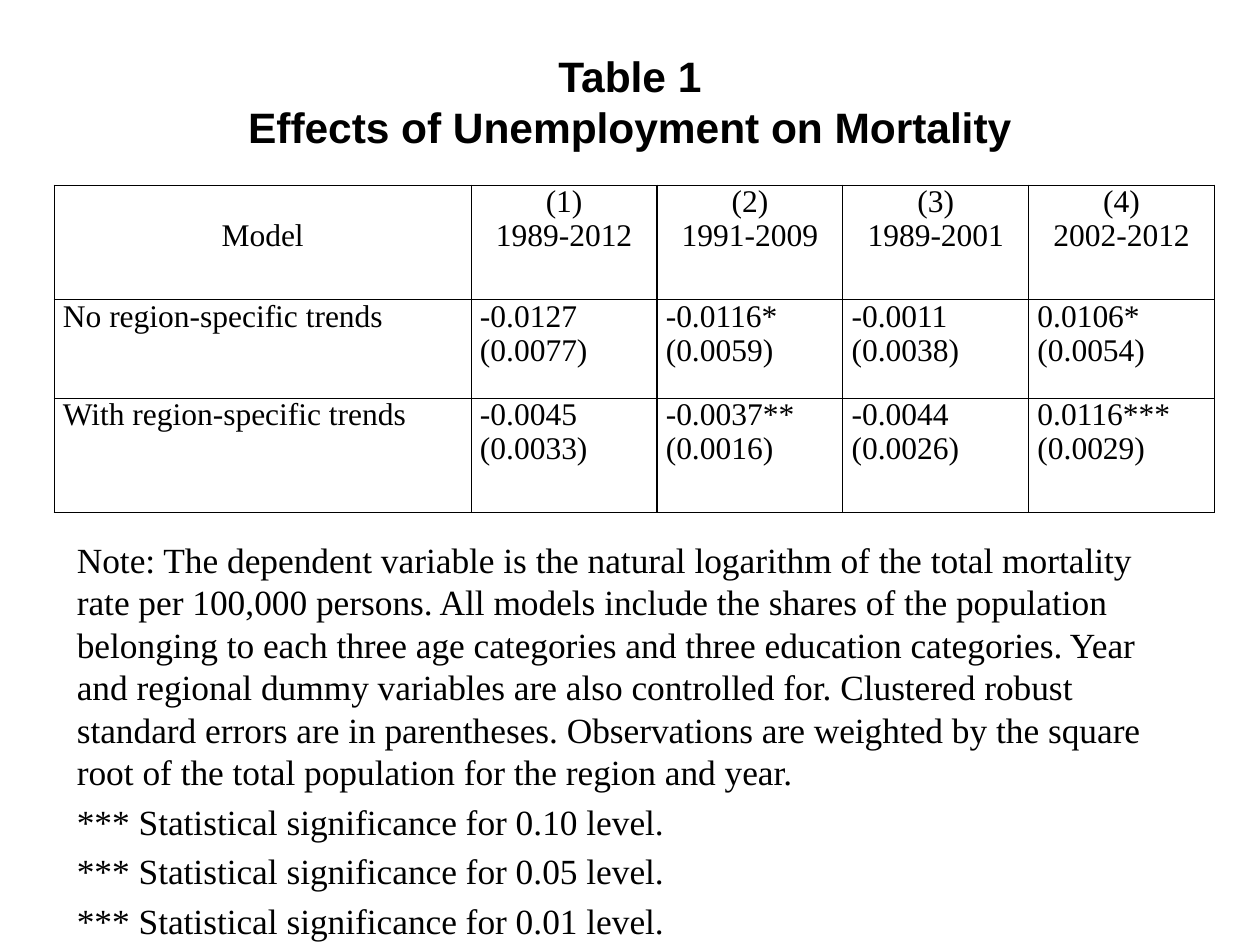
"""Build a slide with a regression table of unemployment effects on mortality."""
from lxml.etree import SubElement
from pptx import Presentation
from pptx.dml.color import RGBColor
from pptx.enum.text import MSO_ANCHOR, MSO_AUTO_SIZE, PP_ALIGN
from pptx.oxml.ns import qn
from pptx.util import Inches, Pt

TITLE = ["Table 1\vEffects of Unemployment on Mortality"]
HEADER = ["Model", "(1)\n1989-2012", "(2)\n1991-2009", "(3)\n1989-2001", "(4)\n2002-2012"]
RESULTS = [
    ["No region-specific trends", "-0.0127\n(0.0077)", "-0.0116*\n(0.0059)",
     "-0.0011\n(0.0038)", "0.0106*\n(0.0054)"],
    ["With region-specific trends", "-0.0045\n(0.0033)", "-0.0037**\n(0.0016)",
     "-0.0044\n(0.0026)", "0.0116***\n(0.0029)"],
]
NOTES = [
    "Note: The dependent variable is the natural logarithm of the total mortality rate per "
    "100,000 persons. All models include the shares of the population belonging to each three "
    "age categories and three education categories. Year and regional dummy variables are also "
    "controlled for. Clustered robust standard errors are in parentheses. Observations are "
    "weighted by the square root of the total population for the region and year.",
] + [f"*** Statistical significance for {level} level." for level in ("0.10", "0.05", "0.01")]

INK = "000000"
THEME = {
    "title": {"name": "Arial", "size": Pt(24.3), "bold": True},
    "notes": {"name": "Times New Roman", "size": Pt(20.2), "bold": False},
    "table": {"name": "Times New Roman", "size": Pt(18), "bold": False},
}
PARAGRAPH = {
    "title": {"alignment": PP_ALIGN.CENTER, "line_spacing": 1.0, "space_before": Pt(0)},
    "notes": {"alignment": PP_ALIGN.LEFT, "line_spacing": 1.0, "space_before": Pt(4)},
    "header": {"alignment": PP_ALIGN.CENTER, "line_spacing": 0.98},
    "result": {"alignment": PP_ALIGN.JUSTIFY, "line_spacing": 0.98},
}
MARGIN, BODY_W = 0.51, 8.98
TABLE_LEFT, TABLE_TOP, TABLE_W, MODEL_W = 0.43, 1.47, 9.21, 3.31
PERIODS = len(HEADER) - 1
COLUMNS = [MODEL_W] + [(TABLE_W - MODEL_W) / PERIODS] * PERIODS
ROWS = [0.91, 0.78, 0.91]
HEADER_DROP = 0.27


def apply(obj, values):
    for name, value in values.items():
        setattr(obj, name, value)


def write(tf, lines, font, paragraph):
    for i, line in enumerate(lines):
        p = tf.add_paragraph() if i else tf.paragraphs[0]
        p.text = line
        apply(p, paragraph)
        for r in p.runs:
            apply(r.font, font)
            r.font.color.rgb = RGBColor.from_string(INK)


def fill_placeholder(sp, top, height, lines, role, anchor):
    apply(sp, {"left": Inches(MARGIN), "top": Inches(top),
               "width": Inches(BODY_W), "height": Inches(height)})
    apply(sp.text_frame, {"word_wrap": True, "auto_size": MSO_AUTO_SIZE.NONE,
                          "vertical_anchor": anchor})
    write(sp.text_frame, lines, THEME[role], PARAGRAPH[role])


def add_borders(cell):
    props = cell._tc.get_or_add_tcPr()
    for i, side in enumerate(("lnL", "lnR", "lnT", "lnB")):
        line = props.makeelement(qn(f"a:{side}"), {"w": str(Pt(0.75))})
        props.insert(i, line)
        SubElement(SubElement(line, qn("a:solidFill")), qn("a:srgbClr"), val=INK)


def add_results_table(s):
    table = s.shapes.add_table(len(ROWS), len(COLUMNS), Inches(TABLE_LEFT), Inches(TABLE_TOP),
                               Inches(TABLE_W), Inches(sum(ROWS))).table
    apply(table, {"first_row": False, "horz_banding": False})
    for column, width in zip(table.columns, COLUMNS):
        column.width = Inches(width)
    for i, (row, height, texts) in enumerate(zip(table.rows, ROWS, [HEADER] + RESULTS)):
        row.height = Inches(height)
        for j, (cell, text) in enumerate(zip(row.cells, texts)):
            drop = HEADER_DROP if i == j == 0 else 0
            apply(cell, {"margin_left": Inches(0.07), "margin_right": Inches(0.07),
                         "margin_top": Inches(drop), "margin_bottom": 0,
                         "vertical_anchor": MSO_ANCHOR.TOP})
            cell.fill.background()
            write(cell.text_frame, text.split("\n"), THEME["table"],
                  PARAGRAPH["result" if i else "header"])
            add_borders(cell)


def main():
    prs = Presentation()
    apply(prs, {"slide_width": Inches(10), "slide_height": Inches(7.5)})
    s = prs.slides.add_slide(prs.slide_layouts[0])
    fill_placeholder(s.shapes.title, 0.29, 1.02, TITLE, "title", MSO_ANCHOR.MIDDLE)
    fill_placeholder(s.placeholders[1], 4.22, 3.26, NOTES, "notes", MSO_ANCHOR.TOP)
    add_results_table(s)
    prs.save("out.pptx")


if __name__ == "__main__":
    main()
